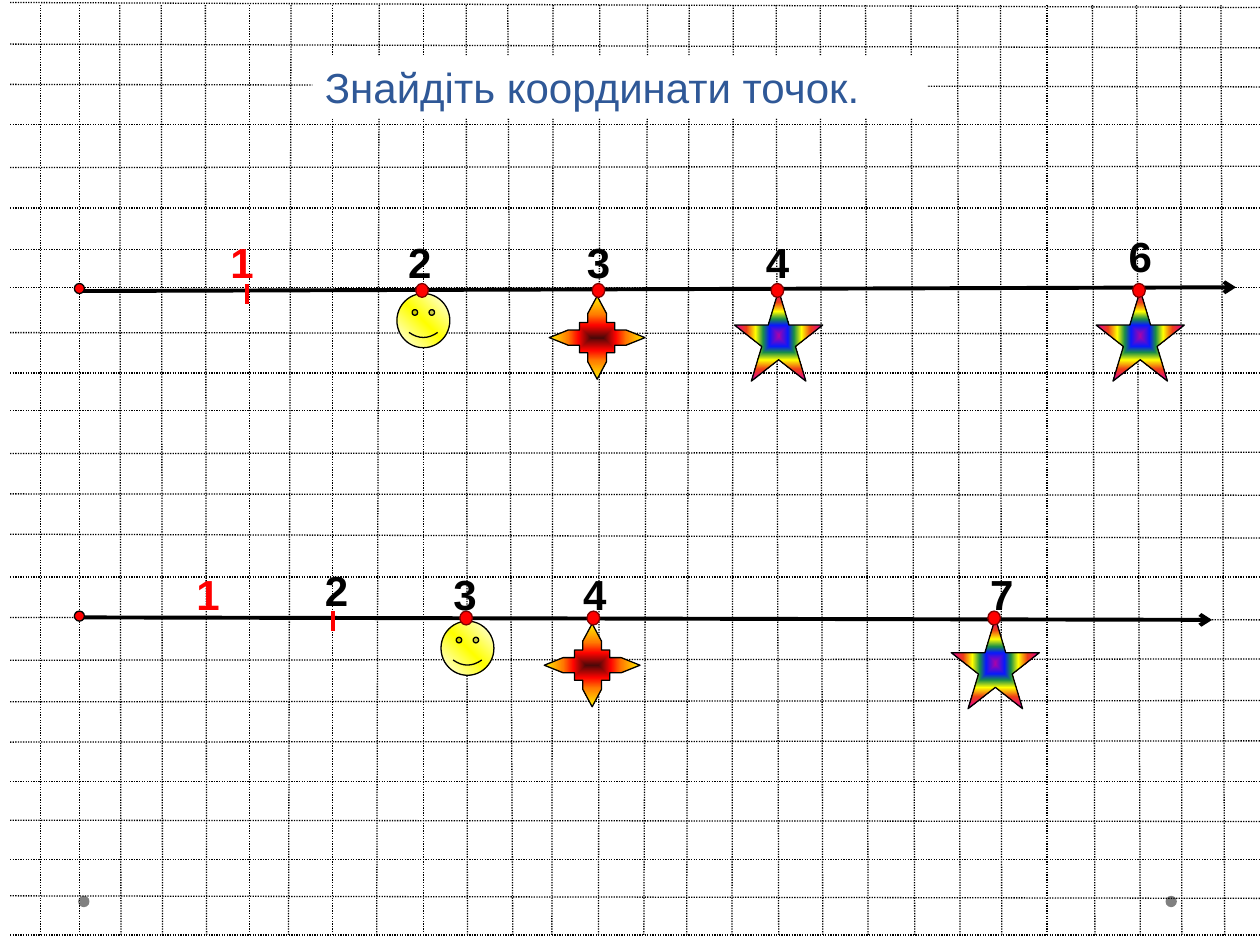
from dataclasses import dataclass

import pptx
import pptx.util
import pptx.dml.color
import pptx.enum.dml
import pptx.enum.shapes
import pptx.enum.text
import pptx.oxml
import pptx.oxml.ns

COLUMNS, ROWS = 100, 75
CELL = pptx.util.Inches(10) / COLUMNS
PRESET = pptx.enum.shapes.MSO_SHAPE


@dataclass(frozen=True)
class Theme:
    font: str = "Arial"
    text_size: float = 24
    thin: float = 0.75
    thick: float = 2.25
    paper: str = "FFFFFF"
    ink: str = "000000"
    title: str = "2F5897"
    accent: str = "FF0000"
    point_edge: str = "800000"
    corner: str = "808080"
    smiley: tuple = ((0, "FFFFFF"), (50, "FFFF00"), (100, "FFFFFF"))
    cross: tuple = ((0, "4D0808"), (30, "FF0300"), (55, "FF7A00"), (100, "FFF200"))
    star: tuple = ((0, "A603AB"), (21, "0819FB"), (35, "1A8D48"), (52, "FFFF00"),
                   (73, "EE3F17"), (88, "E81766"), (100, "A603AB"))


THEME = Theme()

GRID_ROWS = [(0.2, 0.6), (3.5, 3.8), (6.7, 6.9), (9.9, 9.9), (13.3, 13.2), (16.5, 16.5),
             (19.8, 19.8), (22.8, 22.8), (26.4, 26.5), (29.6, 29.6), (32.6, 32.6),
             (36, 35.9), (39.2, 39.3), (42.4, 42.7), (45.8, 45.8), (49, 49.2),
             (52.4, 52.3), (55.7, 55.6), (58.9, 58.8), (62, 62), (65.1, 65.2),
             (68.2, 68.2), (71.1, 71.3), (74.2, 74.2)]
GRID_COLUMNS = [(3.2, 3.2), (6.3, 6.3), (9.5, 9.6), (12.8, 12.9), (16.3, 16.4), (19.8, 19.8),
                (23.1, 22.9), (26.4, 26.4), (30.1, 29.9), (33.6, 33.6), (37, 37.1),
                (40.3, 40.7), (43.9, 43.8), (47.6, 47.5), (51.4, 51.1), (54.7, 54.5),
                (58.2, 58.1), (61.6, 61.8), (65.1, 65.3), (68.7, 68.9), (72.3, 72.6),
                (76, 76.2), (79.4, 79.5), (83.1, 83.1), (86.7, 86.9), (90.2, 90.5),
                (93.7, 93.8), (96.9, 97.2)]


def cells(*counts):
    return [pptx.util.Emu(round(count * CELL)) for count in counts]


def rgb(code):
    return pptx.dml.color.RGBColor.from_string(code)


def paint(shape, fill, edge=None):
    shape.shadow.inherit = False
    if isinstance(fill, str):
        shape.fill.solid()
        shape.fill.fore_color.rgb = rgb(fill)
    if edge:
        shape.line.color.rgb = rgb(edge)
        shape.line.width = pptx.util.Pt(THEME.thin)
    else:
        shape.line.fill.background()


def paint_gradient(shape, stops, direction):
    paint(shape, None, THEME.ink)
    shape.fill.gradient()
    stop_xml = "".join(f'<a:gs pos="{share * 1000}"><a:srgbClr val="{code}"/></a:gs>'
                       for share, code in stops)
    gradient = pptx.oxml.parse_xml(
        f'<a:gradFill {pptx.oxml.ns.nsdecls("a")} rotWithShape="1">'
        f"<a:gsLst>{stop_xml}</a:gsLst>{direction}</a:gradFill>")
    properties = shape._element.spPr
    properties.replace(properties.find(pptx.oxml.ns.qn("a:gradFill")), gradient)


def from_centre(kind):
    return (f'<a:path path="{kind}"><a:fillToRect l="50000" t="50000" '
            'r="50000" b="50000"/></a:path>')


def add_preset(slide, preset, *box):
    return slide.shapes.add_shape(preset, *cells(*box))


def add_line(slide, start, end, color, width, dotted=False, arrow=False):
    line = slide.shapes.add_connector(
        pptx.enum.shapes.MSO_CONNECTOR.STRAIGHT, *cells(*start, *end))
    line.line.color.rgb = rgb(color)
    line.line.width = pptx.util.Pt(width)
    if dotted:
        line.line.dash_style = pptx.enum.dml.MSO_LINE.ROUND_DOT
    if arrow:
        outline = line.line._get_or_add_ln()
        tail = outline.makeelement(pptx.oxml.ns.qn("a:tailEnd"), {"type": "arrow"})
        outline.append(tail)
    properties = line._element.spPr
    properties.append(properties.makeelement(pptx.oxml.ns.qn("a:effectLst"), {}))


def add_text(slide, text, box, color, bold=False, fill=None):
    holder = slide.shapes.add_textbox(*cells(*box))
    if fill:
        paint(holder, fill)
    frame = holder.text_frame
    frame.word_wrap = True
    frame.auto_size = pptx.enum.text.MSO_AUTO_SIZE.SHAPE_TO_FIT_TEXT
    run = frame.paragraphs[0].add_run()
    run.text = text
    run.font.name = THEME.font
    run.font.size = pptx.util.Pt(THEME.text_size)
    run.font.bold = bold
    run.font.color.rgb = rgb(color)


def squared_paper(slide, left, top, width, height):
    for start, end in GRID_ROWS:
        add_line(slide, (left + 0.8, top + start), (left + width, top + end),
                 THEME.ink, THEME.thin, dotted=True)
    for start, end in GRID_COLUMNS:
        add_line(slide, (left + start, top + 0.4), (left + end, top + height - 0.8),
                 THEME.ink, THEME.thin, dotted=True)


def corner_dots(slide, left, top, width):
    for x in (left, left + width - 0.9):
        paint(add_preset(slide, PRESET.OVAL, x, top, 0.9, 0.9), THEME.corner)


def smiley(slide, x, top):
    face = add_preset(slide, PRESET.SMILEY_FACE, x - 2, top + 0.8, 4.2, 4.3)
    face.adjustments[0] = 0.047
    paint_gradient(face, THEME.smiley, '<a:lin ang="18900000" scaled="1"/>')


def cross(slide, x, top):
    quarter = [(0, -3.3), (0.75, -1.9), (0.75, -1.2), (1.4, -1.2),
               (1.4, -0.6), (2.3, -0.6), (3.8, 0)]
    right = quarter + [(dx, -dy) for dx, dy in quarter[-2::-1]]
    left = [(-dx, dy) for dx, dy in right[-2:0:-1]]
    corners = [cells(x - 0.1 + dx, top + 4.3 + dy) for dx, dy in right + left]
    builder = slide.shapes.build_freeform(*corners[0])
    builder.add_line_segments(corners[1:], close=True)
    paint_gradient(builder.convert_to_shape(), THEME.cross, from_centre("rect"))


def star(slide, x, top):
    paint_gradient(add_preset(slide, PRESET.STAR_5_POINT, x - 3.4, top + 0.55, 7, 7.2),
                   THEME.star, from_centre("shape"))


def tick(slide, x, top):
    add_line(slide, (x, top), (x, top + 1.6), THEME.accent, THEME.thick)


def number_line(slide, left, top, width, start_drop, end_drop, marks):
    """Marks: number, point offset, label offset, label rise, figure at the point."""
    add_line(slide, (left, top + start_drop), (left + width, top + end_drop),
             THEME.ink, THEME.thick, arrow=True)
    paint(add_preset(slide, PRESET.OVAL, left - 0.4, top, 0.8, 0.8),
          THEME.accent, THEME.ink)
    for number, offset, label_offset, rise, figure in marks:
        x = left + offset
        if figure:
            figure(slide, x, top)
        if figure not in (None, tick):
            point = add_preset(slide, PRESET.FLOWCHART_CONNECTOR, x - 0.5, top, 1, 1.1)
            paint(point, THEME.accent, THEME.point_edge)
        add_text(slide, number, (left + label_offset, top - rise, 3.1, 5),
                 THEME.accent if number == "1" else THEME.ink, bold=True)


def main():
    deck = pptx.Presentation()
    deck.slide_width, deck.slide_height = cells(COLUMNS, ROWS)
    slide = deck.slides.add_slide(deck.slide_layouts[6])
    slide.background.fill.solid()
    slide.background.fill.fore_color.rgb = rgb(THEME.paper)

    corner_dots(slide, 6.2, 71.1, 87.2)
    squared_paper(slide, 0, 0, COLUMNS, ROWS)
    add_text(slide, "Знайдіть координати точок.", (24.8, 4.4, 48.8, 5),
             THEME.title, fill=THEME.paper)
    number_line(slide, 6.3, 22.5, 91.8, 0.6, 0.3, [
        ("1", 13.3, 11, 4.2, tick), ("2", 27.2, 25.1, 4.2, smiley),
        ("3", 41.2, 39.3, 4.2, cross), ("4", 55.4, 53.5, 4.2, star),
        ("6", 84.1, 82.3, 4.7, star)])
    number_line(slide, 6.3, 48.5, 89.9, 0.5, 0.7, [
        ("1", 10, 8.3, 3.9, None), ("2", 20.1, 18.5, 4.2, tick),
        ("3", 30.7, 28.7, 3.9, smiley), ("4", 40.8, 39, 3.9, cross),
        ("7", 72.6, 71.3, 3.9, star)])
    deck.save("out.pptx")


if __name__ == "__main__":
    main()
